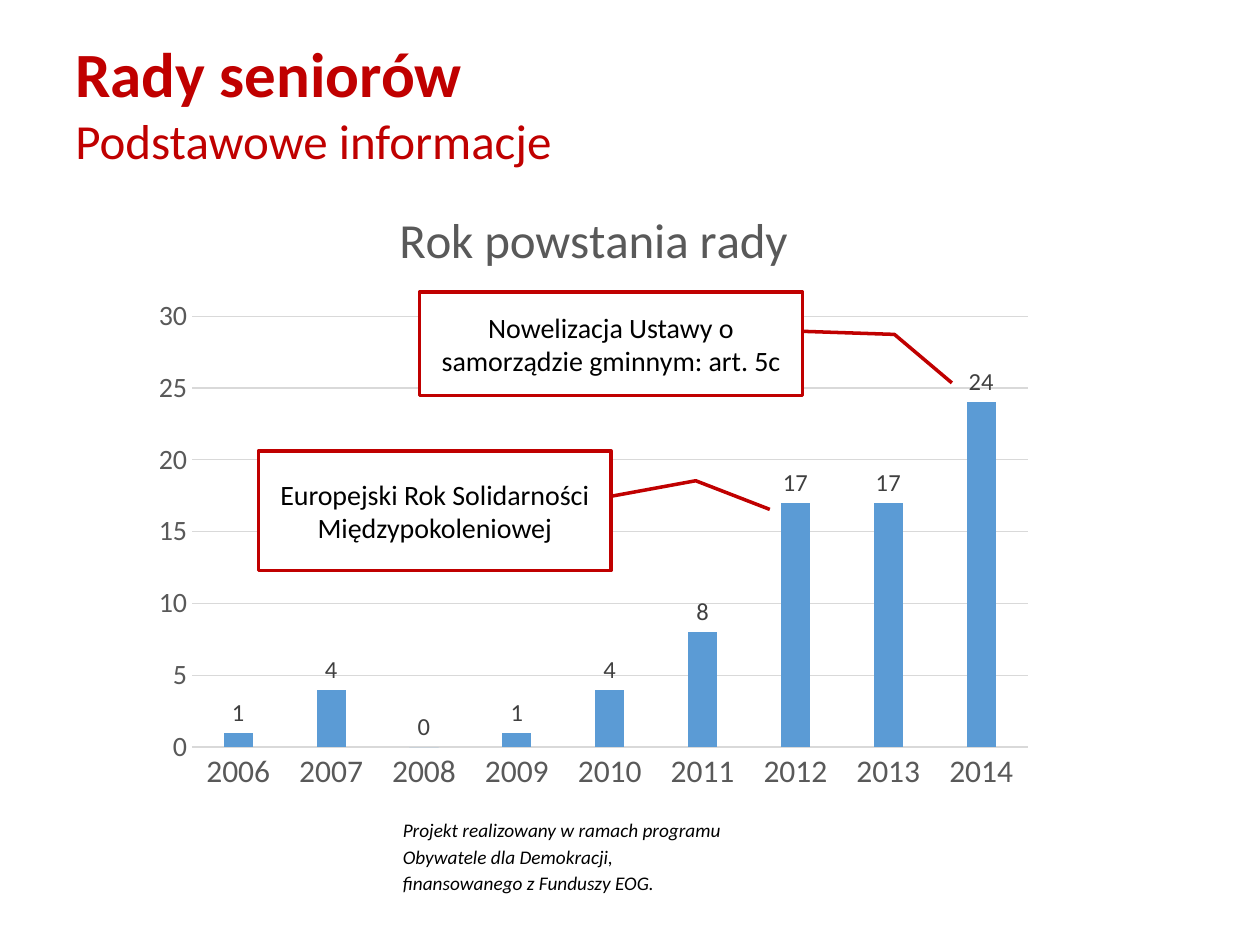
from lxml.etree import SubElement
from pptx import Presentation
from pptx.chart.data import CategoryChartData
from pptx.dml.color import RGBColor
from pptx.enum.chart import XL_CHART_TYPE, XL_LABEL_POSITION, XL_TICK_MARK
from pptx.enum.shapes import MSO_SHAPE
from pptx.enum.text import MSO_ANCHOR, PP_ALIGN
from pptx.oxml.ns import qn
from pptx.util import Cm, Pt

FONT = "Calibri"
COLORS = {
    "red": "C00000",
    "black": "000000",
    "white": "FFFFFF",
    "bar": "5B9BD5",
    "axis_text": "595959",
    "label": "404040",
    "grid": "D9D9D9",
}

TITLE = ("Rady seniorów", "Podstawowe informacje")
FOOTER = ("Projekt realizowany w ramach programu Obywatele dla Demokracji, "
          "finansowanego z Funduszy EOG.")
CHART_TITLE = "Rok powstania rady"
FIRST_YEAR = 2006
COUNCILS = [1, 4, 0, 1, 4, 8, 17, 17, 24]

# text, (left, top, width, height) in cm, leader points as (y, x) shares of the box
CALLOUTS = [
    ("Nowelizacja Ustawy o samorządzie gminnym: art. 5c",
     (8.46, 5.89, 7.72, 2.08), [(0.38, 1), (0.41, 1.24), (0.88, 1.39)]),
    ("Europejski Rok Solidarności Międzypokoleniowej",
     (5.21, 9.09, 7.11, 2.41), [(0.38, 1), (0.25, 1.24), (0.49, 1.45)]),
]


def color(name):
    return RGBColor.from_string(COLORS[name])


def set_font(font, size, color_name, bold=False, italic=False):
    font.name = FONT
    font.size = Pt(size)
    font.bold = bold
    font.italic = italic
    font.color.rgb = color(color_name)


def add_text_box(page, *place):
    frame = page.shapes.add_textbox(*map(Cm, place)).text_frame
    frame.word_wrap = True
    return frame


def add_title(page):
    frame = add_text_box(page, 1.27, 0.71, 20.83, 2.69)
    frame.vertical_anchor = MSO_ANCHOR.MIDDLE
    para = frame.paragraphs[0]
    heading, subheading = TITLE
    span = para.add_run()
    span.text = heading
    set_font(span.font, 36, "red", bold=True)
    para.add_line_break()
    span = para.add_run()
    span.text = subheading
    set_font(span.font, 28, "red")


def add_footer(page):
    para = add_text_box(page, 7.87, 16.31, 7.06, 1.88).paragraphs[0]
    para.text = FOOTER
    para.line_spacing = 1.15
    set_font(para.font, 11, "black", italic=True)


def add_council_chart(page):
    data = CategoryChartData()
    data.categories = [str(FIRST_YEAR + i) for i in range(len(COUNCILS))]
    data.add_series(CHART_TITLE, COUNCILS)
    place = map(Cm, (2.84, 3.61, 18.24, 12.57))
    chart = page.shapes.add_chart(XL_CHART_TYPE.COLUMN_CLUSTERED, *place, data).chart
    set_font(chart.font, 10, "black")
    chart.has_legend = False
    chart.has_title = True
    para = chart.chart_title.text_frame.paragraphs[0]
    para.text = CHART_TITLE
    set_font(para.font, 28, "axis_text")
    chart.chart_title.include_in_layout = False

    for axis, size in ((chart.category_axis, 18), (chart.value_axis, 16)):
        axis.major_tick_mark = axis.minor_tick_mark = XL_TICK_MARK.NONE
        set_font(axis.tick_labels.font, size, "axis_text")
    value_axis = chart.value_axis
    value_axis.minimum_scale, value_axis.maximum_scale, value_axis.major_unit = 0, 30, 5
    value_axis.has_major_gridlines = True
    value_axis.format.line.fill.background()
    for line in (chart.category_axis.format.line, value_axis.major_gridlines.format.line):
        line.color.rgb = color("grid")
        line.width = Pt(0.75)

    plot = chart.plots[0]
    plot.gap_width = 219
    plot.overlap = -27
    plot.vary_by_categories = False
    fill = plot.series[0].format.fill
    fill.solid()
    fill.fore_color.rgb = color("bar")
    plot.has_data_labels = True
    labels = plot.data_labels
    labels.show_value = True
    labels.position = XL_LABEL_POSITION.OUTSIDE_END
    set_font(labels.font, 14, "label")


def add_callout(page, text, place, leader):
    box = page.shapes.add_shape(MSO_SHAPE.LINE_CALLOUT_2, *map(Cm, place))
    box.shadow.inherit = False
    for i, share in enumerate(share for point in leader for share in point):
        box.adjustments[i] = share
    box.fill.solid()
    box.fill.fore_color.rgb = color("white")
    box.line.color.rgb = color("red")
    box.line.width = Pt(2)
    frame = box.text_frame
    frame.word_wrap = True
    frame.vertical_anchor = MSO_ANCHOR.MIDDLE
    para = frame.paragraphs[0]
    para.text = text
    para.alignment = PP_ALIGN.CENTER
    set_font(para.font, 16, "black")


def main():
    deck = Presentation()
    deck.slide_width, deck.slide_height = Cm(25.4), Cm(19.05)
    page = deck.slides.add_slide(deck.slide_layouts[6])
    add_footer(page)
    add_title(page)
    add_council_chart(page)
    for callout in CALLOUTS:
        add_callout(page, *callout)
    deck.save("out.pptx")


if __name__ == "__main__":
    main()
